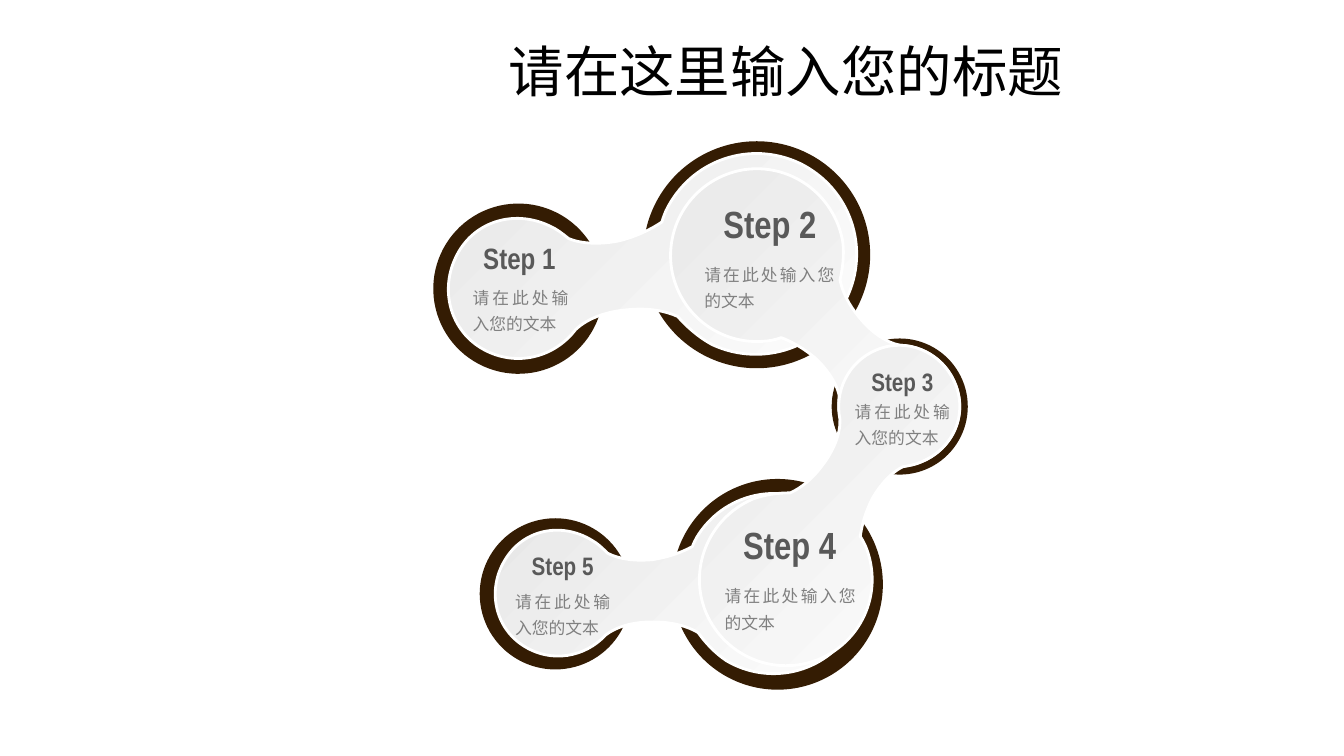
from lxml import etree
from pptx import Presentation
from pptx import util as u
from pptx.dml.color import RGBColor
from pptx.enum import shapes, text
from pptx.oxml import parse_xml
from pptx.oxml.ns import qn

BROWN = RGBColor(0x34, 0x1C, 0x03)
WHITE = RGBColor(0xFF, 0xFF, 0xFF)
BLACK = RGBColor(0, 0, 0)
DARK = RGBColor(0x59, 0x59, 0x59)
GREY = RGBColor(0x80, 0x80, 0x80)

# Dumbbell outline on a 408 x 199 grid: a start, then curves of three points
GRID = (408, 199)
START = (368, 20)
CURVES = [
    [(412, 54), (420, 116), (387, 160)],
    [(354, 203), (292, 212), (247, 179)],
    [(235, 169), (226, 157), (219, 145)],
    [(208, 137), (192, 131), (174, 129)],
    [(152, 126), (131, 129), (117, 138)],
    [(92, 160), (55, 163), (27, 142)],
    [(-4, 119), (-9, 76), (14, 45)],
    [(37, 13), (80, 8), (112, 32)],
    [(118, 36), (123, 42), (128, 48)],
    [(140, 56), (158, 60), (177, 60)],
    [(195, 59), (210, 55), (222, 50)],
    [(224, 46), (226, 43), (228, 40)],
    [(262, -5), (324, -13), START],
]

GRAD = """<a:gradFill rotWithShape="1"
 xmlns:a="http://schemas.openxmlformats.org/drawingml/2006/main">
<a:gsLst><a:gs pos="0"><a:srgbClr val="E6E6E6"/></a:gs>
<a:gs pos="100000"><a:srgbClr val="FFFFFF"/></a:gs></a:gsLst>
<a:path path="circle"><a:fillToRect r="100000" b="100000"/></a:path>
</a:gradFill>"""


class Board:
    """Holds the style and the current slide."""
    head_font = "Arial Narrow"
    body_font = "Arial"
    title_font = "Calibri"

    def __init__(self, slide):
        self.items = slide.shapes

    def disc(self, left, top, size, turn=0):
        disc = self.items.add_shape(shapes.MSO_SHAPE.OVAL, u.Cm(left),
                                    u.Cm(top), u.Cm(size), u.Cm(size))
        disc.rotation = turn
        disc.shadow.inherit = False
        disc.fill.solid()
        disc.fill.fore_color.rgb = BROWN
        disc.line.fill.background()

    def link(self, left, top, width, turn):
        high = width * GRID[1] / GRID[0]
        pen = self.items.build_freeform(u.Cm(left), u.Cm(top))
        pen.add_line_segments([(u.Cm(left + width), u.Cm(top + high))])
        link = pen.convert_to_shape()
        link.rotation = turn
        link.shadow.inherit = False
        link.line.color.rgb = WHITE
        link.line.width = u.Pt(2)

        # Curved outline
        route = link._element.spPr.find(".//" + qn("a:path"))
        for part in list(route):
            route.remove(part)
        route.set("w", str(GRID[0]))
        route.set("h", str(GRID[1]))
        steps = [("a:moveTo", [START])]
        steps += [("a:cubicBezTo", curve) for curve in CURVES]
        for tag, points in steps:
            step = etree.SubElement(route, qn(tag))
            for x, y in points:
                etree.SubElement(step, qn("a:pt"), x=str(x), y=str(y))
        etree.SubElement(route, qn("a:close"))

        # Radial fill, right after the outline
        link._element.spPr.find(qn("a:custGeom")).addnext(parse_xml(GRAD))

    def label(self, box, words, size, font, color, align, space, bold=False):
        frame = self.items.add_textbox(*map(u.Cm, box)).text_frame
        frame.word_wrap = True
        frame.vertical_anchor = text.MSO_ANCHOR.MIDDLE
        para = frame.paragraphs[0]
        para.alignment = align
        para.line_spacing = space
        run = para.add_run()
        run.text = words
        run.font.size = u.Pt(size)
        run.font.name = font
        run.font.bold = bold
        run.font.color.rgb = color

    def title(self, box, words):
        self.label(box, words, 39.6, self.title_font, BLACK,
                   text.PP_ALIGN.LEFT, 0.9)

    def head(self, box, words, size):
        self.label(box, words, size, self.head_font, DARK,
                   text.PP_ALIGN.CENTER, 0.8, True)

    def body(self, box, words):
        self.label(box, words, 12, self.body_font, GREY,
                   text.PP_ALIGN.JUSTIFY, 1.3)


def main():
    deck = Presentation()
    deck.slide_width, deck.slide_height = u.Cm(33.87), u.Cm(19.05)
    board = Board(deck.slides.add_slide(deck.slide_layouts[6]))

    # Lower chain
    board.disc(12.09, 13.06, 3.81)
    board.disc(16.94, 12.07, 5.31)
    board.link(12.5, 12.67, 9.3, 354.4)

    # Upper chain
    board.disc(10.92, 5.13, 4.29, 20.4)
    board.disc(20.96, 8.53, 3.43)
    board.disc(16.21, 3.56, 5.72)
    board.link(11.3, 4.39, 10.36, 348.7)

    # Links through the third step
    board.link(16.26, 5.82, 8.92, 223.6)
    board.link(16.48, 10.46, 8.92, 120.1)

    # Step labels: head box, head size, body box
    steps = [
        ((11.63, 6.1, 2.92, 0.97), 21, (11.66, 6.96, 2.92, 1.6)),
        ((17.5, 5.13, 3.81, 1.19), 27, (17.5, 6.15, 3.78, 2.06)),
        ((21.29, 9.25, 2.9, 0.86), 18, (21.29, 9.83, 2.9, 1.6)),
        ((18.01, 13.23, 3.78, 1.17), 27, (18.01, 14.25, 3.81, 2.06)),
        ((12.73, 13.89, 2.9, 0.86), 18, (12.73, 14.61, 2.9, 1.6)),
    ]
    for num, (head, size, body) in enumerate(steps, 1):
        board.head(head, f"Step {num}", size)
        board.body(body, "请在此处输入您的文本")

    # Title
    board.title((12.57, 1.04, 21.77, 1.68), "请在这里输入您的标题")

    deck.save("out.pptx")


if __name__ == "__main__":
    main()
